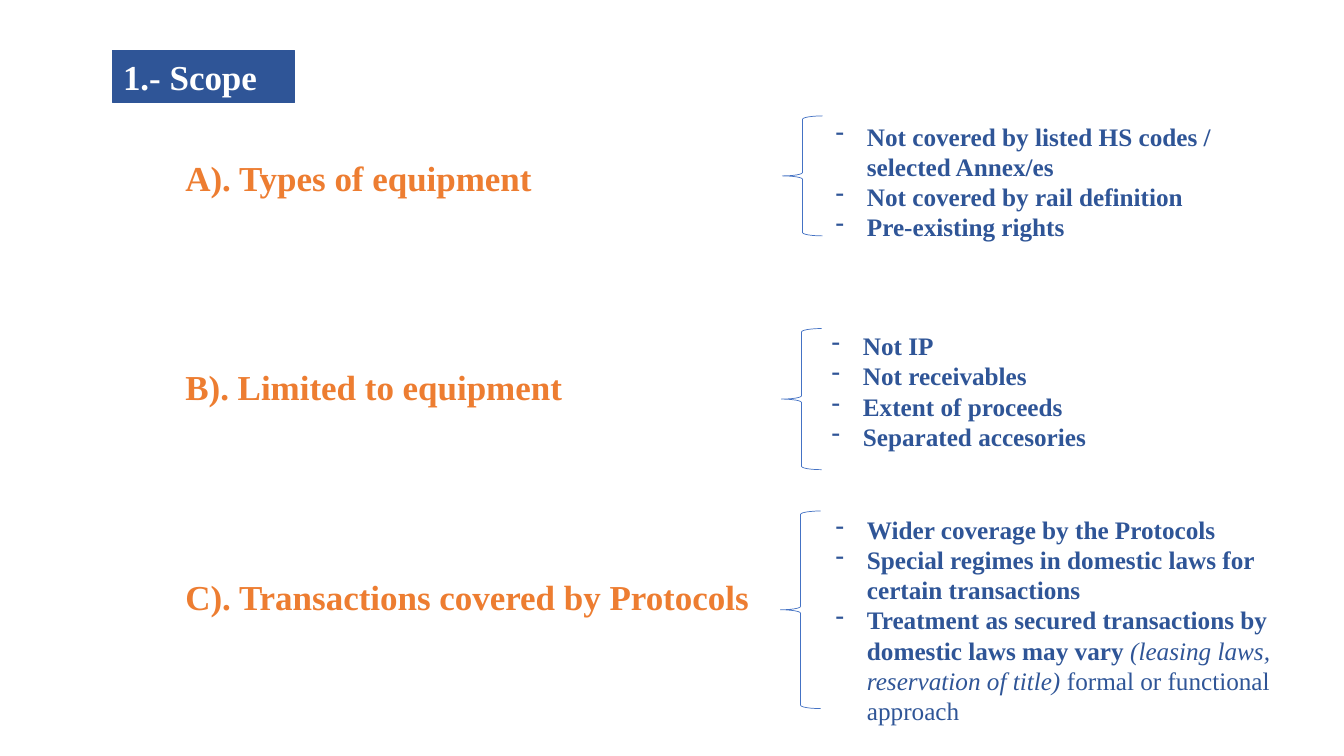
from lxml import etree
from pptx import Presentation
from pptx import util as u
from pptx.dml.color import RGBColor
from pptx.enum import shapes, text
from pptx.oxml import ns

PX = 9144  # 100 px to the inch
COLORS = {"navy": "2F5597", "orange": "ED7D31", "white": "FFFFFF", "blue": "4472C4"}


def rgb(name):
    return RGBColor.from_string(COLORS[name])


class Deck:
    face = "Times New Roman"

    def __init__(self, wide, high):
        self.prs = Presentation()
        self.prs.slide_width, self.prs.slide_height = u.Emu(wide * PX), u.Emu(high * PX)
        self.slide = self.prs.slides.add_slide(self.prs.slide_layouts[5])

    def place(self, box):
        return [u.Emu(n * PX) for n in box]

    def label(self, par, words, size, color, **extra):
        run = par.add_run()
        run.text = words
        form = {"name": self.face, "size": u.Pt(size), "bold": True, "italic": False}
        for key, val in {**form, **extra}.items():
            setattr(run.font, key, val)
        run.font.color.rgb = rgb(color)

    def title(self, box, words):
        shape = self.slide.shapes.title
        for key, val in zip(("left", "top", "width", "height"), self.place(box)):
            setattr(shape, key, val)
        shape.fill.solid()
        shape.fill.fore_color.rgb = rgb("navy")
        shape.line.color.rgb = rgb("navy")
        shape.line.width = u.Pt(0.75)
        shape.text_frame.auto_size = text.MSO_AUTO_SIZE.NONE
        par = shape.text_frame.paragraphs[0]
        par.alignment = text.PP_ALIGN.LEFT
        self.label(par, words, 25, "white")

    def frame(self, box):
        frame = self.slide.shapes.add_textbox(*self.place(box)).text_frame
        frame.word_wrap = True
        return frame

    def head(self, box, words):
        self.label(self.frame(box).paragraphs[0], words, 25, "orange")

    def brace(self, box):
        shape = self.slide.shapes.add_shape(shapes.MSO_SHAPE.LEFT_BRACE, *self.place(box))
        shape.shadow.inherit = False
        shape.fill.background()
        shape.line.color.rgb = rgb("blue")
        shape.line.width = u.Pt(0.5)

    def notes(self, box, items):
        frame = self.frame(box)
        for i, runs in enumerate(items):
            par = frame.add_paragraph() if i else frame.paragraphs[0]
            props = par._p.get_or_add_pPr()
            props.set("marL", str(31 * PX))
            props.set("indent", str(-31 * PX))
            etree.SubElement(props, ns.qn("a:buChar")).set("char", "-")
            for words, form in runs:
                self.label(par, words, 18, "navy", **form)


def plain(*lines):
    return [[(line, {})] for line in lines]


# Heading, brace box, notes box, notes
ROWS = [
    ("A). Types of equipment", (776, 115, 40, 119), (819, 115, 465, 131),
     plain("Not covered by listed HS codes / selected Annex/es",
           "Not covered by rail definition", "Pre-existing rights")),
    ("B). Limited to equipment", (775, 326, 40, 140), (815, 323, 465, 131),
     plain("Not IP", "Not receivables", "Extent of proceeds", "Separated accesories")),
    ("C). Transactions covered by Protocols", (774, 507, 40, 196), (819, 505, 461, 222),
     plain("Wider coverage by the Protocols",
           "Special regimes in domestic laws for certain transactions")
     + [[("Treatment as secured transactions by domestic laws may vary ", {}),
         ("(leasing laws, reservation of title) ", {"bold": False, "italic": True}),
         ("formal or functional approach", {"bold": False})]]),
]
TOP, STEP = 150, 208


def main():
    deck = Deck(1333, 750)
    deck.title((112, 50, 180, 52), "1.- Scope")

    # One row per part of the scope
    for i, (head, brace, box, items) in enumerate(ROWS):
        deck.head((174, TOP + i * STEP, 600, 52), head)
        deck.brace(brace)
        deck.notes(box, items)

    deck.prs.save("out.pptx")


if __name__ == "__main__":
    main()
